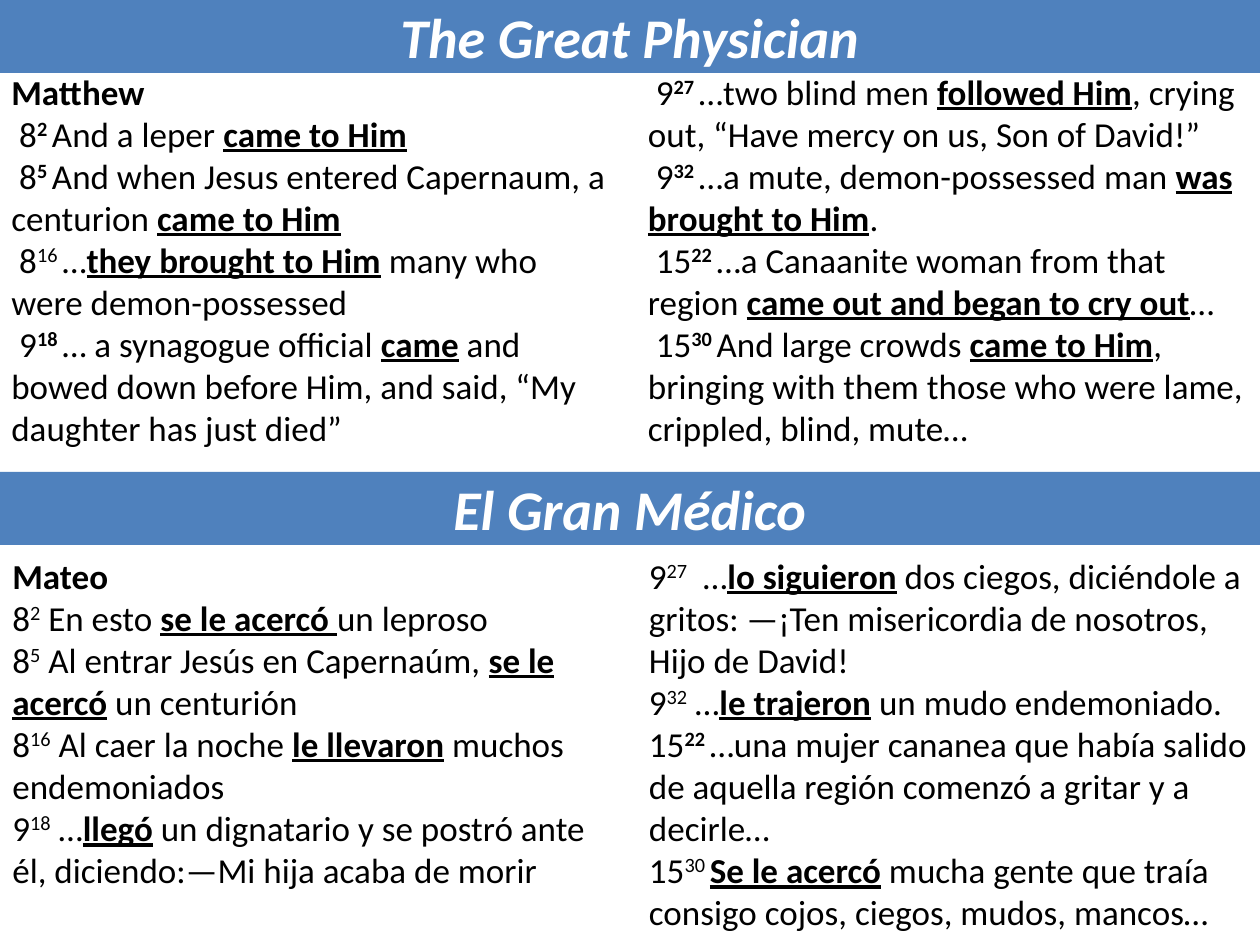
"""Build a bilingual slide of verses about the Great Physician."""
from pptx import Presentation
from pptx.dml.color import RGBColor
from pptx.enum.shapes import MSO_SHAPE
from pptx.enum.text import MSO_ANCHOR, MSO_AUTO_SIZE, PP_ALIGN
from pptx.util import Pt

RECTANGLE = MSO_SHAPE.RECTANGLE
MIDDLE = MSO_ANCHOR.MIDDLE
CENTER = PP_ALIGN.CENTER
NO_FIT = MSO_AUTO_SIZE.NONE
GROW = MSO_AUTO_SIZE.SHAPE_TO_FIT_TEXT
PX = 914400 / 126
WIDTH, HEIGHT, BAR_HEIGHT, BOX_HEIGHT, COLUMN_GAP = 1260, 945, 73, 397, 38
COLORS = {"bar": "4F81BD", "heading": "FFFFFF", "text": "000000"}


def px(*lengths):
    return [round(length * PX) for length in lengths]


def add_span(para, text, size=20, color="text", bold=False, italic=False,
             underline=False, raised=False):
    span = para.add_run()
    span.text = text
    span.font.name = "Calibri"
    span.font.size = Pt(size)
    span.font.bold = bold
    span.font.italic = italic
    span.font.underline = underline
    span.font.color.rgb = RGBColor.from_string(COLORS[color])
    if raised:
        span._r.get_or_add_rPr().set("baseline", "30000")


english = [
    (" 8", "2 ", True, "And a leper ", "came to Him", ""),
    (" 8", "5 ", True, "And when Jesus entered Capernaum, a centurion ", "came to Him", ""),
    (" 8", "16 ", False, "…", "they brought to Him", " many who were demon-possessed"),
    (" 9", "18 ", True, "… a synagogue official ", "came",
     " and bowed down before Him, and said, “My daughter has just died”"),
    (" 9", "27 ", True, "…two blind men ", "followed Him",
     ", crying out, “Have mercy on us, Son of David!”"),
    (" 9", "32 ", True, "…a mute, demon-possessed man ", "was brought to Him", "."),
    (" 15", "22 ", True, "…a Canaanite woman from that region ",
     "came out and began to cry out", "…"),
    (" 15", "30 ", True, "And large crowds ", "came to Him",
     ", bringing with them those who were lame, crippled, blind, mute…"),
]
spanish = [
    ("8", "2", False, " En esto ", "se le acercó ", "un leproso"),
    ("8", "5", False, " Al entrar Jesús en Capernaúm, ", "se le acercó", " un centurión"),
    ("8", "16", False, " Al caer la noche ", "le llevaron", " muchos endemoniados"),
    ("9", "18", False, " …", "llegó",
     " un dignatario y se postró ante él, diciendo:—Mi hija acaba de morir"),
    ("9", "27", False, "  …", "lo siguieron",
     " dos ciegos, diciéndole a gritos: —¡Ten misericordia de nosotros, Hijo de David!"),
    ("9", "32", False, " …", "le trajeron", " un mudo endemoniado."),
    ("15", "22 ", True,
     "…una mujer cananea que había salido de aquella región comenzó a gritar y a decirle…",
     "", ""),
    ("15", "30 ", False, "", "Se le acercó",
     " mucha gente que traía consigo cojos, ciegos, mudos, mancos…"),
]

deck = Presentation()
deck.slide_width, deck.slide_height = px(WIDTH, HEIGHT)
page = deck.slides.add_slide(deck.slide_layouts[5])
title = page.shapes.title
title.left, title.top, title.width, title.height = px(0, 0, WIDTH, BAR_HEIGHT)
second_bar = page.shapes.add_shape(RECTANGLE, *px(0, 472, WIDTH, BAR_HEIGHT))
second_bar.shadow.inherit = False

for bar, heading in ((title, "The Great Physician"), (second_bar, "El Gran Médico")):
    bar.fill.solid()
    bar.fill.fore_color.rgb = RGBColor.from_string(COLORS["bar"])
    bar.line.fill.background()
    frame = bar.text_frame
    frame.auto_size = NO_FIT
    frame.vertical_anchor = MIDDLE
    para = frame.paragraphs[0]
    para.alignment = CENTER
    add_span(para, heading, size=32, color="heading", bold=True, italic=True)

sections = ((-1, 64, "Matthew", english, 0), (0, 548, "Mateo", spanish, 24))
for left, top, book, verses, column_end_space in sections:
    box = page.shapes.add_textbox(*px(left, top, WIDTH, BOX_HEIGHT))
    frame = box.text_frame
    frame.word_wrap = True
    frame.auto_size = GROW
    columns = frame._txBody.bodyPr
    columns.set("numCol", "2")
    columns.set("spcCol", str(px(COLUMN_GAP)[0]))
    add_span(frame.paragraphs[0], book, bold=True)
    for chapter, verse, verse_bold, before, strong, after in verses:
        para = frame.add_paragraph()
        add_span(para, chapter)
        add_span(para, verse, bold=verse_bold, raised=True)
        if before:
            add_span(para, before)
        if strong:
            add_span(para, strong, bold=True, underline=True)
        if after:
            add_span(para, after)
    frame.paragraphs[4].space_after = Pt(column_end_space)

deck.save("out.pptx")
